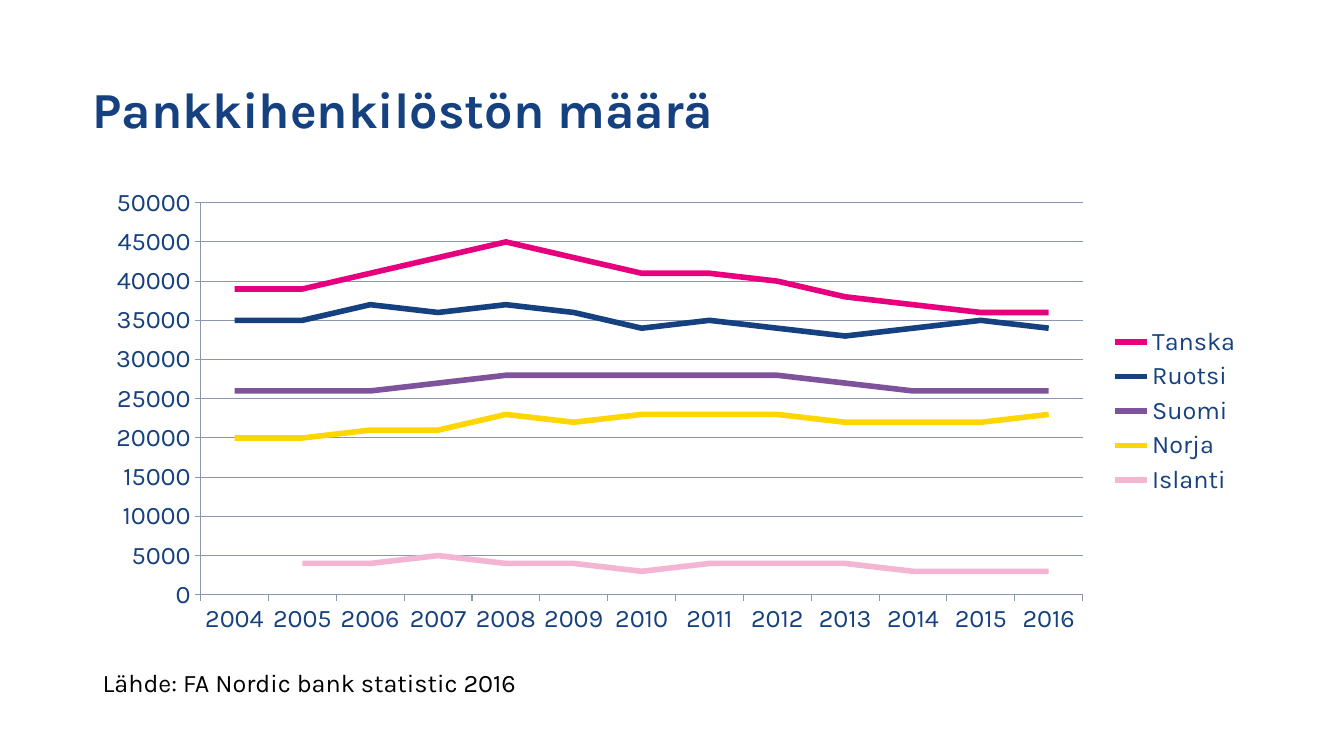
import pptx
import pptx.chart.data
import pptx.dml.color
import pptx.enum.chart
import pptx.enum.text
import pptx.oxml
import pptx.oxml.ns
import pptx.util

Cm = pptx.util.Cm
Pt = pptx.util.Pt
RGBColor = pptx.dml.color.RGBColor

FONT = "Karla"
NAVY = RGBColor(0x16, 0x41, 0x80)
BLACK = RGBColor(0x00, 0x00, 0x00)
GRID = RGBColor(0x8B, 0x96, 0xB2)
PINK = RGBColor(0xE6, 0x00, 0x7E)
PURPLE = RGBColor(0x7F, 0x53, 0x9C)
YELLOW = RGBColor(0xFF, 0xD6, 0x00)
ROSE = RGBColor(0xF4, 0xB5, 0xD3)

YEARS = [str(year) for year in range(2004, 2017)]
# Bank staff in thousands, by country
STAFF = [
    ("Tanska", PINK, [39, 39, 41, 43, 45, 43, 41, 41, 40, 38, 37, 36, 36]),
    ("Ruotsi", NAVY, [35, 35, 37, 36, 37, 36, 34, 35, 34, 33, 34, 35, 34]),
    ("Suomi", PURPLE, [26, 26, 26, 27, 28, 28, 28, 28, 28, 27, 26, 26, 26]),
    ("Norja", YELLOW, [20, 20, 21, 21, 23, 22, 23, 23, 23, 22, 22, 22, 23]),
    ("Islanti", ROSE, [None, 4, 4, 5, 4, 4, 3, 4, 4, 4, 3, 3, 3]),
]


def style_font(font, size, color, bold=False):
    font.name = FONT
    font.size = Pt(size)
    font.bold = bold
    font.color.rgb = color


def add_text(page, box, text, size, color, bold=False, spacing=1.0):
    """Place one line of text, centred vertically in its box."""
    frame = page.shapes.add_textbox(*box).text_frame
    frame.word_wrap = True
    frame.vertical_anchor = pptx.enum.text.MSO_ANCHOR.MIDDLE
    para = frame.paragraphs[0]
    para.text = text
    para.line_spacing = spacing
    style_font(para.font, size, color, bold)


def set_plot_area(chart, x, y, w, h):
    """Fix the inner plot area, in fractions of the chart box."""
    plot_area = chart.element.find(".//" + pptx.oxml.ns.qn("c:plotArea"))
    for layout in plot_area.findall(pptx.oxml.ns.qn("c:layout")):
        plot_area.remove(layout)
    sizes = "".join(f'<c:{tag} val="{value}"/>'
                    for tag, value in zip("xywh", (x, y, w, h)))
    plot_area.insert(0, pptx.oxml.parse_xml(
        f'<c:layout {pptx.oxml.ns.nsdecls("c")}><c:manualLayout>'
        '<c:layoutTarget val="inner"/><c:xMode val="edge"/><c:yMode val="edge"/>'
        f'{sizes}</c:manualLayout></c:layout>'))


def style_line(line, color, width):
    line.color.rgb = color
    line.width = Pt(width)


def add_staff_chart(page, box):
    data = pptx.chart.data.CategoryChartData()
    data.categories = YEARS
    for country, _, thousands in STAFF:
        data.add_series(country, [n and n * 1000 for n in thousands])
    chart = page.shapes.add_chart(
        pptx.enum.chart.XL_CHART_TYPE.LINE, *box, data).chart
    style_font(chart.font, 18, NAVY)
    chart.has_title = False
    set_plot_area(chart, 0.093, 0.052, 0.761, 0.844)

    # Axes and grid
    for axis in (chart.category_axis, chart.value_axis):
        axis.major_tick_mark = pptx.enum.chart.XL_TICK_MARK.OUTSIDE
        axis.minor_tick_mark = pptx.enum.chart.XL_TICK_MARK.NONE
        style_line(axis.format.line, GRID, 0.75)
    scale = chart.value_axis
    scale.minimum_scale, scale.maximum_scale, scale.major_unit = 0, 50000, 5000
    scale.has_major_gridlines = True
    style_line(scale.major_gridlines.format.line, GRID, 0.75)
    scale.tick_labels.number_format = "0"
    scale.tick_labels.number_format_is_linked = False

    # Legend
    chart.has_legend = True
    chart.legend.position = pptx.enum.chart.XL_LEGEND_POSITION.RIGHT
    chart.legend.include_in_layout = False

    # Country lines
    chart.plots[0].vary_by_categories = False
    for series, (_, color, _) in zip(chart.plots[0].series, STAFF):
        series.smooth = False
        series.marker.style = pptx.enum.chart.XL_MARKER_STYLE.NONE
        style_line(series.format.line, color, 4)


def build_chart_slide(deck):
    page = deck.slides.add_slide(deck.slide_layouts[6])
    # Title
    add_text(page, (Cm(2.08), Cm(1), Cm(29.21), Cm(3.68)),
             "Pankkihenkilöstön määrä", 36, NAVY, bold=True, spacing=0.9)
    # Chart
    add_staff_chart(page, (Cm(2.34), Cm(4.5), Cm(29.21), Cm(11.71)))
    # Source line
    add_text(page, (Cm(2.34), Cm(16.69), Cm(21.87), Cm(1.02)),
             "Lähde: FA Nordic bank statistic 2016", 18, BLACK)


def main():
    deck = pptx.Presentation()
    deck.slide_width, deck.slide_height = Cm(33.87), Cm(19.05)
    build_chart_slide(deck)
    deck.save("out.pptx")


if __name__ == "__main__":
    main()
